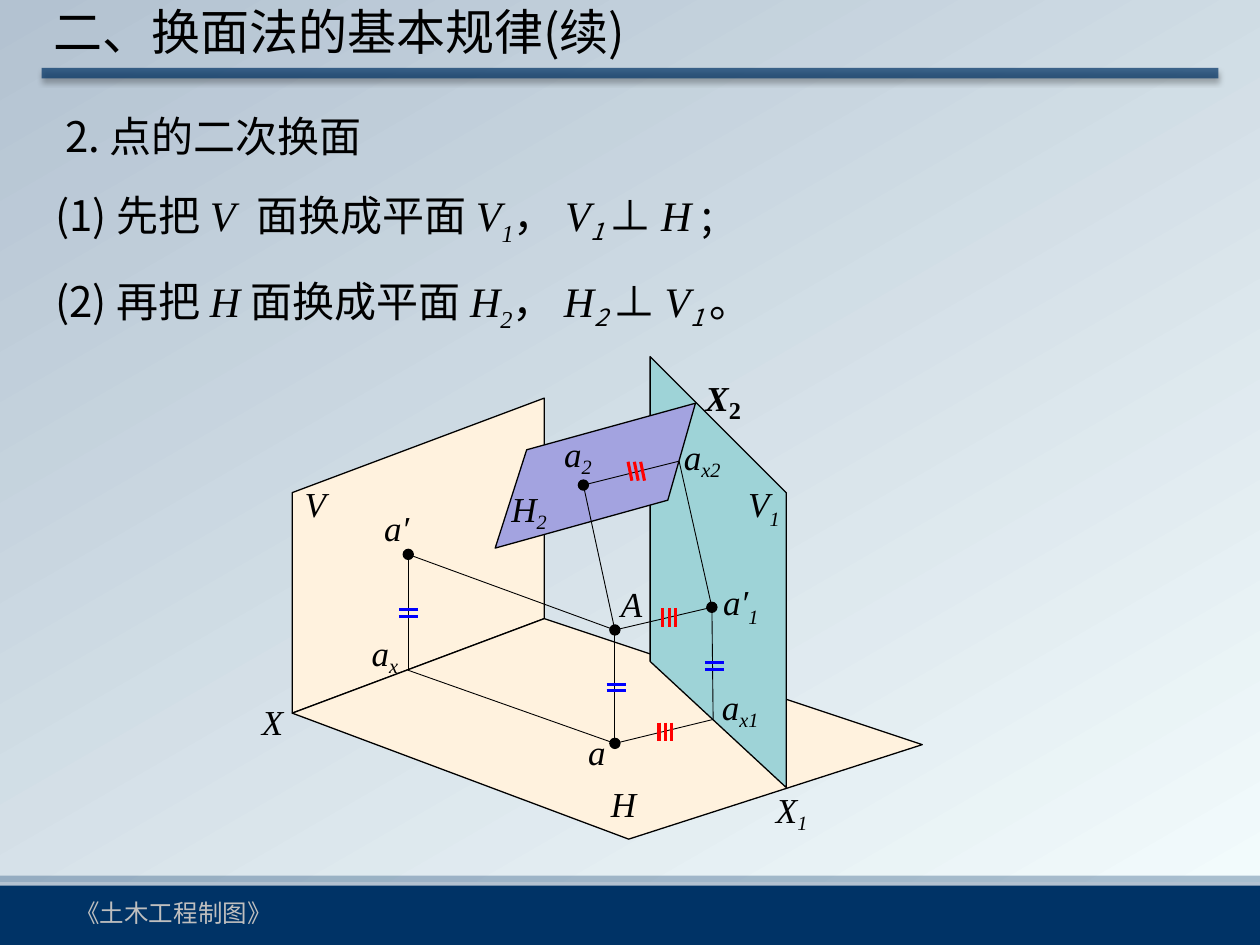
from lxml import etree
from pptx import Presentation
from pptx.dml.color import RGBColor
from pptx.enum.shapes import MSO_CONNECTOR, MSO_SHAPE
from pptx.enum.text import MSO_AUTO_SIZE
from pptx.oxml.ns import qn
from pptx.util import Inches, Pt

SANS, SERIF = "Noto Sans CJK SC", "Times New Roman"
NAVY, BLACK, GREY, BLUE, RED = "003366", "000000", "BFBFBF", "0000FF", "FF0000"
CREAM, TEAL, VIOLET = "FFF2DE", "9ED3D7", "A3A3E0"

TITLE = "二、换面法的基本规律(续)"
FOOTER = "《土木工程制图》"

# Run styles: font, italic, baseline in percent, letter spacing in points
PLAIN = (SANS, False, 0, 0)
VAR = (SERIF, True, 0, 0)
SUB = (SERIF, True, -25, 0)
SANS_SUB = (SANS, True, -20, 0)
GAP = (SERIF, True, 0, 6)

# Paragraphs: left margin, runs
BODY = [
    (0.15, [("2. 点的二次换面", PLAIN)]),
    (0.07, [("(1) 先把 ", PLAIN), ("V", VAR), (" ", GAP), ("面换成平面 ", PLAIN),
            ("V", VAR), ("1", SUB), ("， ", PLAIN), ("V", VAR), ("1 ", SANS_SUB),
            ("⊥ ", PLAIN), ("H ", VAR), (";", PLAIN)]),
    (0.07, [("(2) 再把 ", PLAIN), ("H ", VAR), ("面换成平面 ", PLAIN),
            ("H", VAR), ("2", SUB), ("， ", PLAIN), ("H", VAR), ("2 ", SANS_SUB),
            ("⊥ ", PLAIN), ("V", VAR), ("1 ", SANS_SUB), ("。", PLAIN)]),
]

# Projection planes: colour, corners
PLANES = [
    (CREAM, [(2.32, 3.91), (4.32, 3.16), (4.32, 4.91), (2.32, 5.66)]),
    (CREAM, [(2.32, 5.66), (4.32, 4.91), (7.32, 5.91), (4.99, 6.66)]),
    (TEAL, [(5.16, 2.83), (5.16, 5.25), (6.24, 6.25), (6.24, 3.91)]),
    (VIOLET, [(4.18, 3.57), (5.52, 3.2), (5.3, 3.97), (3.93, 4.35)]),
]

# The point A, its projections, and the feet on the axes
POINTS = {
    "A": (4.88, 5), "a": (4.88, 5.9), "a'": (3.24, 4.4), "ax": (3.24, 5.32),
    "a1'": (5.65, 4.82), "ax1": (5.66, 5.71), "a2": (4.63, 3.85), "ax2": (5.39, 3.66),
}
PROJECTORS = [
    ("a'", "ax"), ("ax", "a"), ("A", "a"), ("a'", "A"), ("ax1", "a1'"),
    ("a", "ax1"), ("A", "a1'"), ("A", "a2"), ("a1'", "ax2"), ("a2", "ax2"),
]
DOTS = ["A", "a", "a'", "a1'", "a2"]

# Labels: letter, subscript, baseline, left, top, width
LABELS = [
    ("V", "", 0, 2.32, 3.78, 0.37), ("H", "", 0, 4.75, 6.16, 0.42),
    ("X", "", 0, 1.98, 5.51, 0.37), ("X", "1", -20, 6.06, 6.21, 0.47),
    ("V", "1", -25, 5.84, 3.78, 0.47), ("H", "2", -20, 3.96, 3.82, 0.5),
    ("a′", "", 0, 2.95, 3.97, 0.41), ("a", "", 0, 4.57, 5.75, 0.34),
    ("A", "", 0, 4.83, 4.57, 0.37), ("a", "x", -20, 2.85, 4.96, 0.42),
    ("a′", "1", -25, 5.64, 4.56, 0.51), ("a", "x1", -20, 5.63, 5.39, 0.52),
    ("a", "x2", -20, 5.33, 3.41, 0.52), ("a", "2", -20, 4.38, 3.38, 0.44),
]

# Equal-length marks: tick centres; the red ones also have a lean
BLUE_MARKS = [(3.24, 4.87), (4.89, 5.46), (5.67, 5.29)]
RED_MARKS = [(5.31, 4.9, 0), (5.28, 5.81, 0), (5.05, 3.74, 0.03)]
TICK = 0.15

deck = Presentation()
deck.slide_width, deck.slide_height = Inches(10), Inches(7.5)
page = deck.slides.add_slide(deck.slide_layouts[6])


def color(value):
    return RGBColor.from_string(value)


def set_alpha(element, percent):
    tint = next(element.iter(qn("a:srgbClr")))
    etree.SubElement(tint, qn("a:alpha"), val=str(percent * 1000))


def add_block(kind, left, top, width, height, fill):
    block = page.shapes.add_shape(kind, Inches(left), Inches(top), Inches(width), Inches(height))
    block.shadow.inherit = False
    block.fill.solid()
    block.fill.fore_color.rgb = color(fill)
    block.line.fill.background()
    return block


def add_line(start, end, hue, width):
    line = page.shapes.add_connector(
        MSO_CONNECTOR.STRAIGHT, *(Inches(value) for value in (*start, *end)))
    line.line.color.rgb = color(hue)
    line.line.width = Pt(width)
    effects = etree.SubElement(line._element.spPr, qn("a:effectLst"))
    return line, effects


def add_box(left, top, width, height, wrap=True):
    box = page.shapes.add_textbox(Inches(left), Inches(top), Inches(width), Inches(height))
    box.text_frame.word_wrap = wrap
    box.text_frame.auto_size = MSO_AUTO_SIZE.SHAPE_TO_FIT_TEXT
    return box.text_frame


def add_span(para, text, size, style=PLAIN, hue=BLACK, bold=False):
    face, italic, baseline, spacing = style
    span = para.add_run()
    span.text = text
    font = span.font
    font.size, font.name, font.italic, font.bold = Pt(size), face, italic, bold
    font.color.rgb = color(hue)
    props = font._element
    etree.SubElement(props, qn("a:ea"), typeface=face)
    if baseline:
        props.set("baseline", str(baseline * 1000))
    if spacing:
        props.set("spc", str(spacing * 100))


# Background and footer band
backdrop = add_block(MSO_SHAPE.RECTANGLE, 0, 0, 10, 7, "FFFFFF")
backdrop.fill.gradient()
backdrop.fill.gradient_angle = 300
for stop, shade in zip(backdrop.fill.gradient_stops, ("B3C2D1", "F2FBFC")):
    stop.color.rgb = color(shade)
strip = add_block(MSO_SHAPE.RECTANGLE, 0, 6.95, 10, 0.17, NAVY)
set_alpha(strip._element.spPr, 30)
add_block(MSO_SHAPE.RECTANGLE, 0, 7.03, 10, 0.47, NAVY)
add_span(add_box(0.5, 7.08, 8.17, 0.34).paragraphs[0], FOOTER, 14, hue=GREY)

# Title with its rule
rule, effects = add_line((0.33, 0.58), (9.67, 0.58), NAVY, 6)
set_alpha(rule._element.spPr, 70)
shadow = etree.SubElement(effects, qn("a:outerShdw"), blurRad=str(Pt(3)), dist=str(Pt(2)),
                          dir="5400000", rotWithShape="0")
etree.SubElement(shadow, qn("a:srgbClr"), val=BLACK)
set_alpha(shadow, 40)
add_span(add_box(0.33, -0.04, 9.33, 0.57).paragraphs[0], TITLE, 28)

# Body text
frame = add_box(0.27, 0.63, 6.69, 1.84)
for index, (margin, runs) in enumerate(BODY):
    para = frame.add_paragraph() if index else frame.paragraphs[0]
    para.line_spacing = 1.5
    para._p.get_or_add_pPr().set("marL", str(Inches(margin)))
    for text, style in runs:
        add_span(para, text, 24, style)

# Planes
for fill, corners in PLANES:
    outline = [(Inches(x), Inches(y)) for x, y in corners]
    builder = page.shapes.build_freeform(*outline[0])
    builder.add_line_segments(outline[1:], close=True)
    plane = builder.convert_to_shape()
    plane.shadow.inherit = False
    plane.fill.solid()
    plane.fill.fore_color.rgb = color(fill)
    plane.line.color.rgb = color(BLACK)
    plane.line.width = Pt(0.75)

# Projection lines and points
for start, end in PROJECTORS:
    add_line(POINTS[start], POINTS[end], BLACK, 0.5)
for name in DOTS:
    x, y = POINTS[name]
    dot = add_block(MSO_SHAPE.OVAL, x - 0.04, y - 0.04, 0.08, 0.08, BLACK)
    dot.line.color.rgb = color(BLACK)
    dot.line.width = Pt(0.75)

# Labels
for letter, sub, baseline, left, top, width in LABELS:
    para = add_box(left, top, width, 0.44, wrap=False).paragraphs[0]
    add_span(para, letter, 20, VAR)
    if sub:
        add_span(para, sub, 20, (SERIF, True, baseline, 0))
para = add_box(5.5, 2.88, 0.5, 0.43, wrap=False).paragraphs[0]
add_span(para, "X", 20, VAR, bold=True)
add_span(para, "2", 24, (SERIF, False, -20, 0), bold=True)

# Equal-length marks
for x, y in BLUE_MARKS:
    for shift in (-0.03, 0.02):
        add_line((x - TICK / 2, y + shift), (x + TICK / 2, y + shift), BLUE, 1.75)
for x, y, lean in RED_MARKS:
    for shift in (-0.05, 0, 0.05):
        add_line((x + shift - lean / 2, y - TICK / 2), (x + shift + lean / 2, y + TICK / 2), RED, 1.75)

deck.save("out.pptx")
